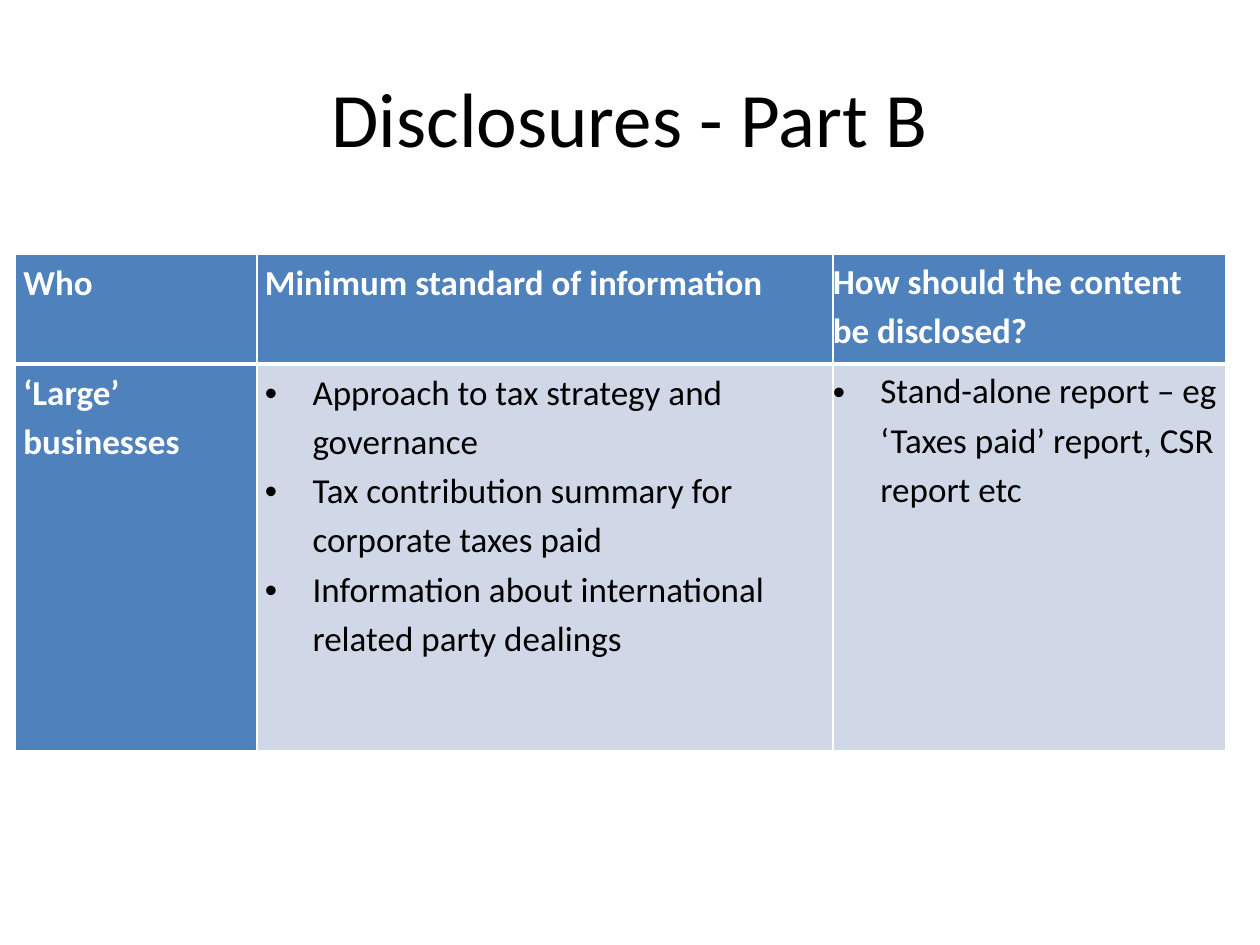
from lxml import etree
from pptx import Presentation
from pptx.dml.color import RGBColor
from pptx.enum import text
from pptx.oxml.ns import qn
from pptx.util import Pt

WHITE = RGBColor(0xFF, 0xFF, 0xFF)
BLACK = RGBColor(0, 0, 0)
BLUE = RGBColor(0x4F, 0x81, 0xBD)
PALE = RGBColor(0xD0, 0xD8, 0xE8)


def write(tf, lines, font="Calibri", size=20, color=BLACK, bold=False,
          align=None, spacing=None, bullet=False, indent=27.2):
    """Fill a text frame, one paragraph for each line."""
    for i, line in enumerate(lines):
        p = tf.paragraphs[0] if i == 0 else tf.add_paragraph()
        p.alignment = align
        p.line_spacing = spacing
        r = p.add_run()
        r.text = line
        r.font.name, r.font.size, r.font.bold = font, Pt(size), bold
        r.font.color.rgb = color
        if bullet:
            pPr = p._p.get_or_add_pPr()
            pPr.set("marL", str(Pt(indent)))
            pPr.set("indent", str(-Pt(indent)))
            etree.SubElement(pPr, qn("a:buFont")).set("typeface", "Arial")
            etree.SubElement(pPr, qn("a:buChar")).set("char", "•")


def border(cell, side, width, color=WHITE):
    ln = etree.SubElement(cell._tc.get_or_add_tcPr(), qn("a:ln" + side))
    ln.set("w", str(Pt(width)))
    fill = etree.SubElement(ln, qn("a:solidFill"))
    etree.SubElement(fill, qn("a:srgbClr")).set("val", str(color))


class Deck:
    """Holds the table style and the current slide."""
    head_fill, body_fill = BLUE, PALE
    spacing = 1.15

    def __init__(self, width, height):
        self.prs = Presentation()
        self.prs.slide_width, self.prs.slide_height = Pt(width), Pt(height)
        self.s = self.prs.slides.add_slide(self.prs.slide_layouts[5])

    def title(self, words, x, y, w, h):
        sp = self.s.shapes.title
        sp.left, sp.top, sp.width, sp.height = Pt(x), Pt(y), Pt(w), Pt(h)
        sp.text_frame.vertical_anchor = text.MSO_ANCHOR.MIDDLE
        write(sp.text_frame, [words], size=44, align=text.PP_ALIGN.CENTER)

    def table(self, rows, x, y, widths, heights):
        table = self.s.shapes.add_table(
            len(rows), len(widths), Pt(x), Pt(y),
            Pt(sum(widths)), Pt(sum(heights))).table
        table.first_col = True
        for col, w in zip(table.columns, widths):
            col.width = Pt(w)
        for row, h in zip(table.rows, heights):
            row.height = Pt(h)
        for i, row in enumerate(rows):
            for j, lines in enumerate(row):
                self.cell(table.cell(i, j), lines, header_row=i == 0,
                          header_col=j == 0, flush=j == len(row) - 1)

    def cell(self, cell, lines, header_row, header_col, flush):
        head = header_row or header_col
        # The last column has no inner margins
        cell.margin_left = cell.margin_right = Pt(0 if flush else 4.5)
        cell.margin_top = Pt(0 if flush else 0.7)
        cell.margin_bottom = Pt(0)
        # A thick rule parts the header from the body
        sides = {"L": 1, "R": 1}
        sides.update({"T": 1, "B": 3} if header_row else {"T": 3, "B": 1})
        for side, width in sides.items():
            border(cell, side, width)
        cell.fill.solid()
        cell.fill.fore_color.rgb = self.head_fill if head else self.body_fill
        write(cell.text_frame, lines, color=WHITE if head else BLACK,
              bold=head, spacing=self.spacing, bullet=not head)


def main():
    deck = Deck(720, 540)

    # Title
    deck.title("Disclosures - Part B", 36, 21.6, 648, 90)

    # Disclosure table
    rows = [
        [["Who"],
         ["Minimum standard of information"],
         ["How should the content be disclosed?"]],
        [["‘Large’ businesses"],
         ["Approach to tax strategy and governance",
          "Tax contribution summary for corporate taxes paid",
          "Information about international related party dealings"],
         ["Stand-alone report – eg ‘Taxes paid’ report, CSR report etc"]],
    ]
    deck.table(rows, 8.9, 145.5, widths=[138, 329, 224.8],
               heights=[62.6, 221])

    deck.prs.save("out.pptx")


if __name__ == "__main__":
    main()
